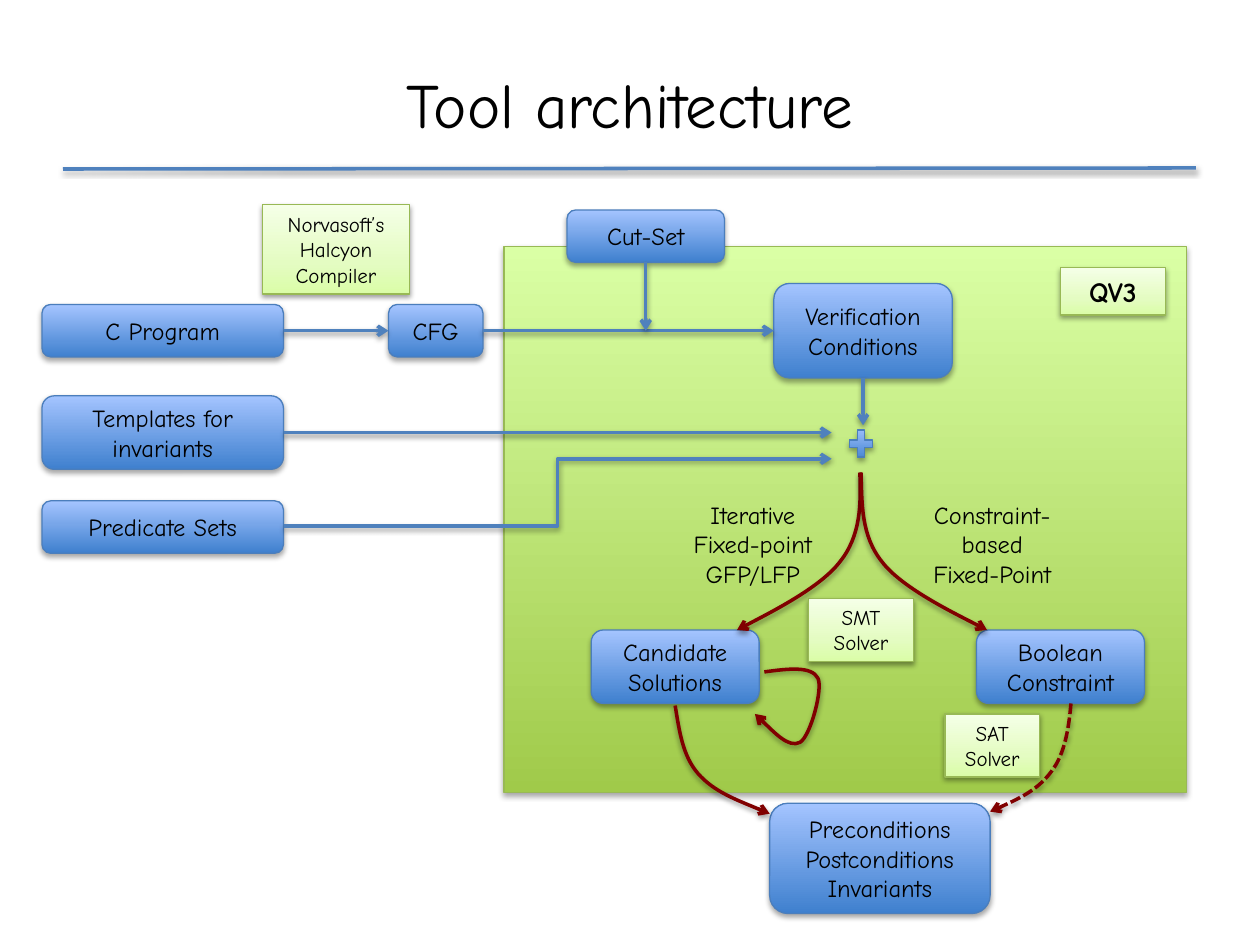
from copy import deepcopy
from lxml import etree
from pptx import Presentation
from pptx.dml.color import RGBColor
from pptx.enum.dml import MSO_LINE
from pptx.enum.shapes import MSO_CONNECTOR, MSO_SHAPE
from pptx.enum.text import MSO_ANCHOR, PP_ALIGN
from pptx.oxml.ns import qn
from pptx.util import Inches, Pt

RECT, ROUNDED, PLUS = MSO_SHAPE.RECTANGLE, MSO_SHAPE.ROUNDED_RECTANGLE, MSO_SHAPE.MATH_PLUS
STRAIGHT, ELBOW = MSO_CONNECTOR.STRAIGHT, MSO_CONNECTOR.ELBOW
MIDDLE, TOP, CENTER = MSO_ANCHOR.MIDDLE, MSO_ANCHOR.TOP, PP_ALIGN.CENTER
FONT = "Comic Neue"
CELL = 1 / 12  # inches; the slide is a grid of 120 columns by 90 rows

COLORS = {"text": "000000", "shadow": "000000", "data": "4F81BD", "solving": "800000"}
STYLES = {  # gradient stops from bottom to top, outline, shadow opacity and distance
    "panel": ([(0, "A0CA4A"), (1, "DAFFA5")], "98B955", 35, 1.8),
    "step": ([(0, "3F80CE"), (1, "A4C4FF")], "4B7EBC", 35, 1.8),
    "engine": ([(0, "DAFDA7"), (0.35, "E4FCC2"), (1, "F5FFE7")], "98B955", 38, 1.6),
}

# Places are column, row, columns wide, rows high.
TITLE = ("Tool architecture", (6, 3.6, 108, 12.4))
TITLE_RULE = ((6, 16.1), (113.9, 16))
TOOL_PANEL = (48, 23.5, 65, 52)
JOIN = (80.5, 40.5, 3, 3.5)
STEPS = [
    ("C Program", (4, 29, 23, 5)),
    ("Templates for invariants", (4, 37.7, 23, 7)),
    ("Predicate Sets", (4, 47.7, 23, 5)),
    ("CFG", (37, 29, 9, 5)),
    ("Cut-Set", (54, 20, 15, 5)),
    ("Verification Conditions", (73.7, 27, 17, 9)),
    ("Candidate Solutions", (56.3, 60, 16, 7)),
    ("Boolean Constraint", (93, 60, 16, 7)),
    ("Preconditions\nPostconditions\nInvariants", (73.3, 76.5, 21, 10.5)),
]
ENGINES = [  # text, place, size, bold
    ("Norvasoft’s Halcyon Compiler", (25, 19.5, 14, 8.5), 12, False),
    ("QV3", (101, 25.5, 10, 4.5), 16, True),
    ("SMT Solver", (77, 57, 10, 6), 12, False),
    ("SAT Solver", (90, 68, 9, 6), 12, False),
]
METHODS = [
    ("Iterative\nFixed-point\nGFP/LFP", (64.2, 47, 15, 9.7)),
    ("Constraint-\nbased\nFixed-Point", (87, 47, 15, 9.7)),
]
DATA_FLOWS = [
    (STRAIGHT, (27, 31.5), (37, 31.5)),
    (STRAIGHT, (46, 31.5), (73.7, 31.5)),
    (STRAIGHT, (61.5, 25), (61.5, 31.5)),
    (STRAIGHT, (82.2, 36), (82.2, 40.5)),
    (STRAIGHT, (27, 41.2), (79.2, 41.2)),
    (ELBOW, (27, 50.1), (79.2, 43.7)),
]
SOLVING_FLOWS = [  # dashed, start followed by triples of Bezier points
    (False, [(81.9, 45), (82, 48), (82, 51), (80, 53.5), (78.1, 56), (70.2, 60), (70.2, 60)]),
    (False, [(82, 45), (82.1, 48), (82, 51), (84, 53.5), (85.9, 56), (94, 60), (94, 60)]),
    (False, [(72.8, 64), (75, 63.7), (77.3, 63.4), (77.9, 64.6), (78.4, 65.6),
             (77.2, 70.1), (76.2, 70.7), (75.1, 71.3), (71.9, 68), (71.9, 68)]),
    (False, [(64.3, 67.2), (64.7, 69.6), (65, 72), (66.5, 73.7), (68, 75.4),
             (70.7, 76.4), (73.3, 77.5)]),
    (True, [(102, 67), (101.8, 69.4), (101.4, 71.8), (100.2, 73.4), (98.9, 75.2),
            (96.6, 76.3), (94.3, 77.3)]),
]


def grid(cells):
    return [Inches(n * CELL) for n in cells]


def add_shadow(shape, opacity, distance):
    """Drop a soft shadow downwards; call it once the outline is set."""
    shape_props = shape._element.spPr
    for old in shape_props.findall(qn("a:effectLst")):
        shape_props.remove(old)
    effects = etree.SubElement(shape_props, qn("a:effectLst"))
    shadow = etree.SubElement(effects, qn("a:outerShdw"), blurRad=str(Pt(3.1)),
                              dist=str(Pt(distance)), dir="5400000", rotWithShape="0")
    color = etree.SubElement(shadow, qn("a:srgbClr"), val=COLORS["shadow"])
    etree.SubElement(color, qn("a:alpha"), val=str(opacity * 1000))


def write(frame, text, size, bold=False, anchor=MIDDLE):
    frame.word_wrap = True
    frame.vertical_anchor = anchor
    for i, line in enumerate(text.split("\n")):
        paragraph = frame.paragraphs[0] if i == 0 else frame.add_paragraph()
        paragraph.alignment = CENTER
        run = paragraph.add_run()
        run.text = line
        run.font.name, run.font.size, run.font.bold = FONT, Pt(size), bold
        run.font.color.rgb = RGBColor.from_string(COLORS["text"])


def add_box(slide, geometry, place, style):
    stops, outline, opacity, distance = STYLES[style]
    box = slide.shapes.add_shape(geometry, *grid(place))
    box.fill.gradient()
    box.fill.gradient_angle = 90
    stop_list = box._element.spPr.find(".//" + qn("a:gsLst"))
    while len(stop_list) < len(stops):
        stop_list.append(deepcopy(stop_list[-1]))
    for stop, (position, color) in zip(box.fill.gradient_stops, stops):
        stop.position = position
        stop.color.rgb = RGBColor.from_string(color)
    box.line.color.rgb = RGBColor.from_string(outline)
    box.line.width = Pt(0.75)
    add_shadow(box, opacity, distance)
    return box


def add_label(slide, text, place, size, anchor):
    write(slide.shapes.add_textbox(*grid(place)).text_frame, text, size, anchor=anchor)


def style_flow(flow, color, arrow=True, dashed=False):
    flow.line.color.rgb = RGBColor.from_string(COLORS[color])
    flow.line.width = Pt(2)
    if dashed:
        flow.line.dash_style = MSO_LINE.SQUARE_DOT
    if arrow:
        etree.SubElement(flow._element.spPr.find(qn("a:ln")), qn("a:tailEnd"), type="arrow")
    add_shadow(flow, 38, 1.6)


def add_curve(slide, points):
    """Draw a freeform and turn each three of its segments into one Bezier curve."""
    start, *rest = [grid(point) for point in points]
    builder = slide.shapes.build_freeform(*start)
    builder.add_line_segments(rest, close=False)
    curve = builder.convert_to_shape()
    curve.fill.background()
    segments = list(curve._element.iter(qn("a:lnTo")))
    for i in range(0, len(segments), 3):
        bezier = etree.Element(qn("a:cubicBezTo"))
        segments[i].addprevious(bezier)
        for segment in segments[i:i + 3]:
            bezier.append(segment[0])
            segment.getparent().remove(segment)
    return curve


def main():
    deck = Presentation()
    deck.slide_width, deck.slide_height = grid((120, 90))
    slide = deck.slides.add_slide(deck.slide_layouts[6])

    rule = slide.shapes.add_connector(STRAIGHT, *grid(TITLE_RULE[0] + TITLE_RULE[1]))
    style_flow(rule, "data", arrow=False)
    add_box(slide, RECT, TOOL_PANEL, "panel")
    add_label(slide, *TITLE, 36, MIDDLE)
    for text, place in STEPS:
        write(add_box(slide, ROUNDED, place, "step").text_frame, text, 14)
    for text, place, size, bold in ENGINES:
        write(add_box(slide, RECT, place, "engine").text_frame, text, size, bold)
    for text, place in METHODS:
        add_label(slide, text, place, 14, TOP)
    for dashed, points in SOLVING_FLOWS:
        style_flow(add_curve(slide, points), "solving", dashed=dashed)
    for kind, start, end in DATA_FLOWS:
        style_flow(slide.shapes.add_connector(kind, *grid(start + end)), "data")
    add_box(slide, PLUS, JOIN, "step")
    deck.save("out.pptx")


if __name__ == "__main__":
    main()
